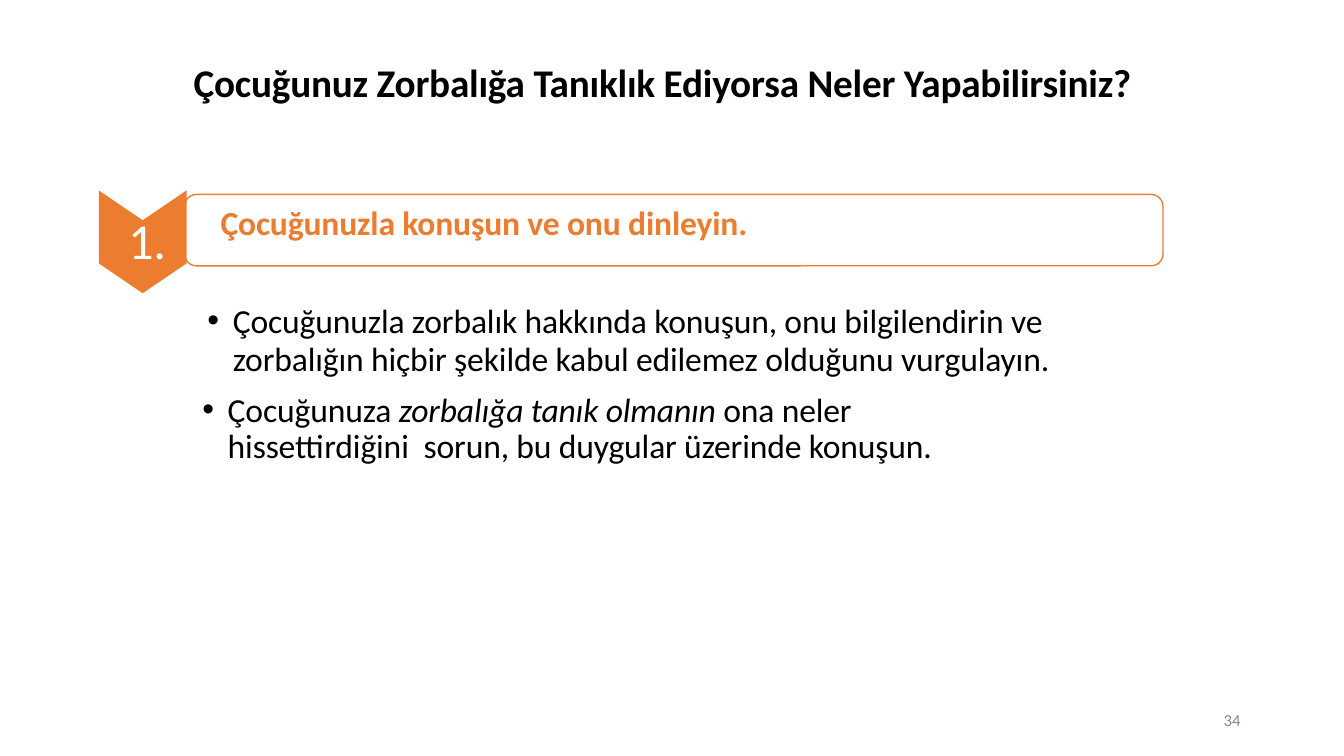
from dataclasses import dataclass

from lxml.etree import SubElement
from pptx import Presentation
from pptx.dml.color import RGBColor
from pptx.enum.shapes import MSO_SHAPE as Preset
from pptx.oxml.ns import qn
from pptx.util import Cm, Pt


@dataclass(frozen=True)
class Theme:
    """Colours, type sizes and font of the slide."""
    font: str = "Calibri"
    accent: str = "EC7C30"
    ink: str = "000000"
    light: str = "FFFFFF"
    muted: str = "888888"
    title: int = 28
    body: int = 24
    number: int = 36
    page: int = 12


class SlideBuilder:
    """Draws styled elements on one slide, with lengths in centimetres."""

    def __init__(self, slide, theme):
        self.slide = slide
        self.theme = theme

    def panel(self, left, top, width, height):
        """Add a rounded outline in the accent colour."""
        panel = self.slide.shapes.add_shape(
            Preset.ROUNDED_RECTANGLE, Cm(left), Cm(top), Cm(width), Cm(height))
        panel.shadow.inherit = False
        panel.fill.background()
        panel.line.color.rgb = RGBColor.from_string(self.theme.accent)
        panel.line.width = Pt(0.96)

    def down_chevron(self, left, top, width, height, notch):
        """Add a chevron that points down and fills the given bounds."""
        shift = (height - width) / 2
        chevron = self.slide.shapes.add_shape(
            Preset.CHEVRON, Cm(left - shift), Cm(top + shift), Cm(height), Cm(width))
        chevron.rotation = 90
        chevron.adjustments[0] = notch
        chevron.shadow.inherit = False
        chevron.fill.solid()
        chevron.fill.fore_color.rgb = RGBColor.from_string(self.theme.accent)
        chevron.line.fill.background()

    def text_frame(self, left, top, width, height, inset=0.06):
        """Add a wrapping text box and return its frame."""
        frame = self.slide.shapes.add_textbox(
            Cm(left), Cm(top), Cm(width), Cm(height)).text_frame
        frame.word_wrap = True
        frame.margin_left = frame.margin_right = frame.margin_bottom = 0
        frame.margin_top = Cm(inset)
        return frame

    def run(self, paragraph, words, size, color, bold=None, italic=None, tracking=0):
        """Append one styled run, with tracking in hundredths of a point."""
        run = paragraph.add_run()
        run.text = words
        font = run.font
        font.name, font.size = self.theme.font, Pt(size)
        font.bold, font.italic = bold, italic
        font.color.rgb = RGBColor.from_string(color)
        if tracking:
            run._r.get_or_add_rPr().set("spc", str(tracking))

    def label(self, words, bounds, size, color, **style):
        """Add a one-line text."""
        paragraph = self.text_frame(*bounds).paragraphs[0]
        self.run(paragraph, words, size, color, **style)

    def page_number(self, words, bounds):
        """Add the small page number."""
        paragraph = self.text_frame(*bounds, inset=0).paragraphs[0]
        paragraph.line_spacing = Pt(12.4)
        self.run(paragraph, words, self.theme.page, self.theme.muted)

    def bullets(self, items, bounds):
        """Add bullets given as (indent, right margin, leading, space before, runs)."""
        frame = self.text_frame(*bounds)
        for index, (indent, right, leading, before, runs) in enumerate(items):
            paragraph = frame.add_paragraph() if index else frame.paragraphs[0]
            properties = paragraph._p.get_or_add_pPr()
            properties.set("marL", str(Cm(indent)))
            properties.set("marR", str(Cm(right)))
            properties.set("indent", str(Cm(-0.64)))
            SubElement(properties, qn("a:buFont"), typeface="Arial")
            SubElement(properties, qn("a:buChar"), char="•")
            paragraph.line_spacing = Pt(leading)
            if before:
                paragraph.space_before = Pt(before)
            for words, italic in runs:
                self.run(paragraph, words, self.theme.body, self.theme.ink,
                         italic=italic, tracking=-10)


def main():
    """Build and save the slide."""
    deck = Presentation()
    deck.slide_width, deck.slide_height = Cm(33.87), Cm(19.05)
    theme = Theme()
    page = SlideBuilder(deck.slides.add_slide(deck.slide_layouts[6]), theme)

    page.panel(4.65, 4.9, 24.66, 1.8)
    page.down_chevron(2.49, 4.8, 2.21, 2.59, notch=0.34)
    page.bullets([
        (0.79, 0, 27.4, 0, [
            ("Çocuğunuzla zorbalık hakkında konuşun, onu bilgilendirin ve "
             "zorbalığın hiçbir şekilde kabul edilemez olduğunu vurgulayın.", False)]),
        (0.66, 2.1, 25.9, 10.5, [
            ("Çocuğunuza ", False),
            ("zorbalığa tanık olmanın ", True),
            ("ona neler hissettirdiğini  sorun, bu duygular üzerinde konuşun.", False)]),
    ], (5.08, 7.54, 21.8, 4.19))
    page.page_number("34", (30.84, 17.96, 0.7, 0.5))
    page.label("1.", (3.23, 5.21, 1.1, 1.6), theme.number, theme.light, tracking=-10)
    page.label("Çocuğunuz Zorbalığa Tanıklık Ediyorsa Neler Yapabilirsiniz?",
               (4.88, 1.4, 24.03, 1.24), theme.title, theme.ink, bold=True, tracking=-15)
    page.label("Çocuğunuzla konuşun ve onu dinleyin.",
               (5.56, 5.03, 13.6, 1.09), theme.body, theme.accent, bold=True, tracking=-10)

    deck.save("out.pptx")


if __name__ == "__main__":
    main()
